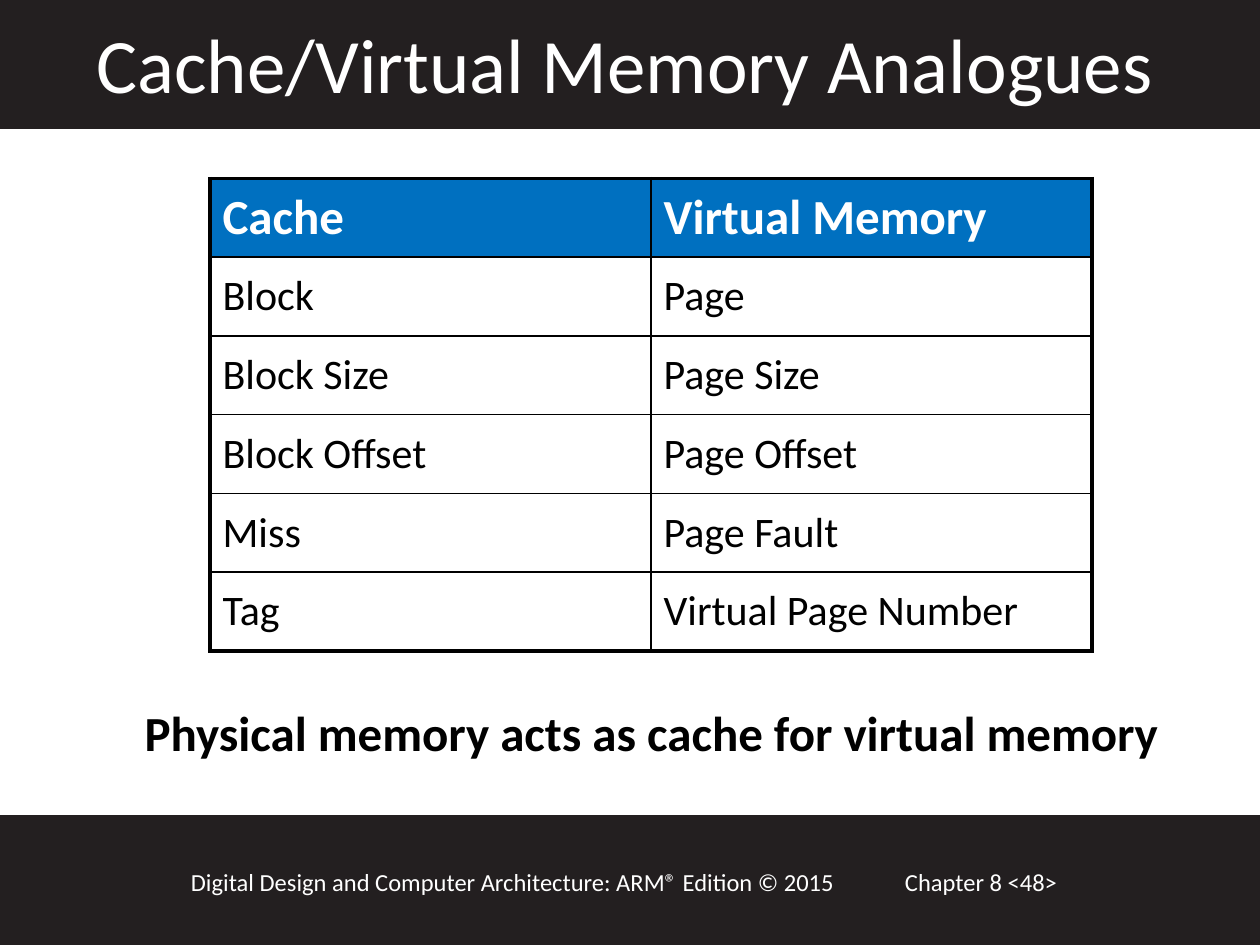
from lxml import etree
from pptx import Presentation
from pptx.dml.color import RGBColor
from pptx.enum import shapes, text
from pptx.oxml.ns import qn
from pptx.util import Pt

DARK, BLUE, BLACK, WHITE = "231F20", "0070C0", "000000", "FFFFFF"
ROWS = [
    ("Cache", "Virtual Memory"),
    ("Block", "Page"),
    ("Block Size", "Page Size"),
    ("Block Offset", "Page Offset"),
    ("Miss", "Page Fault"),
    ("Tag", "Virtual Page Number"),
]


def paint(item, color):
    """Give a fill or line a solid colour."""
    item.solid()
    item.fore_color.rgb = RGBColor.from_string(color)


def write(frame, words, size, color, bold=False):
    frame.text = words
    para = frame.paragraphs[0]
    para.alignment = text.PP_ALIGN.LEFT
    font = para.font
    font.name, font.size, font.bold = "Calibri", Pt(size), bold
    font.color.rgb = RGBColor.from_string(color)


def add_bar(slide, top, height):
    bar = slide.shapes.add_shape(
        shapes.MSO_SHAPE.RECTANGLE, 0, Pt(top), Pt(720), Pt(height))
    bar.shadow.inherit = False
    paint(bar.fill, DARK)
    paint(bar.line.fill, DARK)
    bar.line.width = Pt(2)


def add_text(slide, words, box, size, color, bold=False):
    shape = slide.shapes.add_textbox(*map(Pt, box))
    shape.text_frame.word_wrap = True
    write(shape.text_frame, words, size, color, bold)


def set_title(slide, words):
    title = slide.shapes.title
    title.left, title.top, title.width, title.height = map(Pt, (48, 6, 624, 60))
    frame = title.text_frame
    frame.auto_size = text.MSO_AUTO_SIZE.NONE
    frame.vertical_anchor = text.MSO_ANCHOR.MIDDLE
    write(frame, words, 44, WHITE)
    # Bring the title in front of the bars
    slide.shapes.element.append(title.element)


def set_edges(cell, widths):
    """Draw cell borders; they must come before the fill in the XML."""
    props = cell._tc.get_or_add_tcPr()
    for tag, width in widths.items():
        edge = etree.SubElement(props, qn(f"a:{tag}"), w=str(Pt(width)))
        fill = etree.SubElement(edge, qn("a:solidFill"))
        etree.SubElement(fill, qn("a:srgbClr"), val=BLACK)


def add_grid(slide, rows, left, top, width, height):
    count, cols = len(rows), len(rows[0])
    table = slide.shapes.add_table(
        count, cols, *map(Pt, (left, top, width, height))).table
    table.horz_banding = False
    for r, row in enumerate(rows):
        for c, words in enumerate(row):
            cell = table.cell(r, c)
            cell.vertical_anchor = text.MSO_ANCHOR.MIDDLE
            outer = {"lnL": c == 0, "lnR": c == cols - 1,
                     "lnT": r == 0, "lnB": r == count - 1}
            set_edges(cell, {k: 2.25 if v else 1 for k, v in outer.items()})
            if r == 0:
                paint(cell.fill, BLUE)
                write(cell.text_frame, words, 28, WHITE, True)
            else:
                cell.fill.background()
                write(cell.text_frame, words, 24, BLACK)


def main():
    prs = Presentation()
    prs.slide_width, prs.slide_height = Pt(720), Pt(540)
    slide = prs.slides.add_slide(prs.slide_layouts[5])
    add_bar(slide, 466.5, 73.5)
    add_bar(slide, 0, 72.5)
    set_title(slide, "Cache/Virtual Memory Analogues")
    add_grid(slide, ROWS, 120, 102, 504, 270)
    add_text(slide, "Physical memory acts as cache for virtual memory",
             (75.6, 398, 636, 64), 28, BLACK, True)
    add_text(slide, "Digital Design and Computer Architecture: ARM® Edition © 2015",
             (102, 492, 414, 24), 14, WHITE)
    add_text(slide, "Chapter 8 <48>", (510, 492, 156, 24), 14, WHITE)
    prs.save("out.pptx")


if __name__ == "__main__":
    main()
